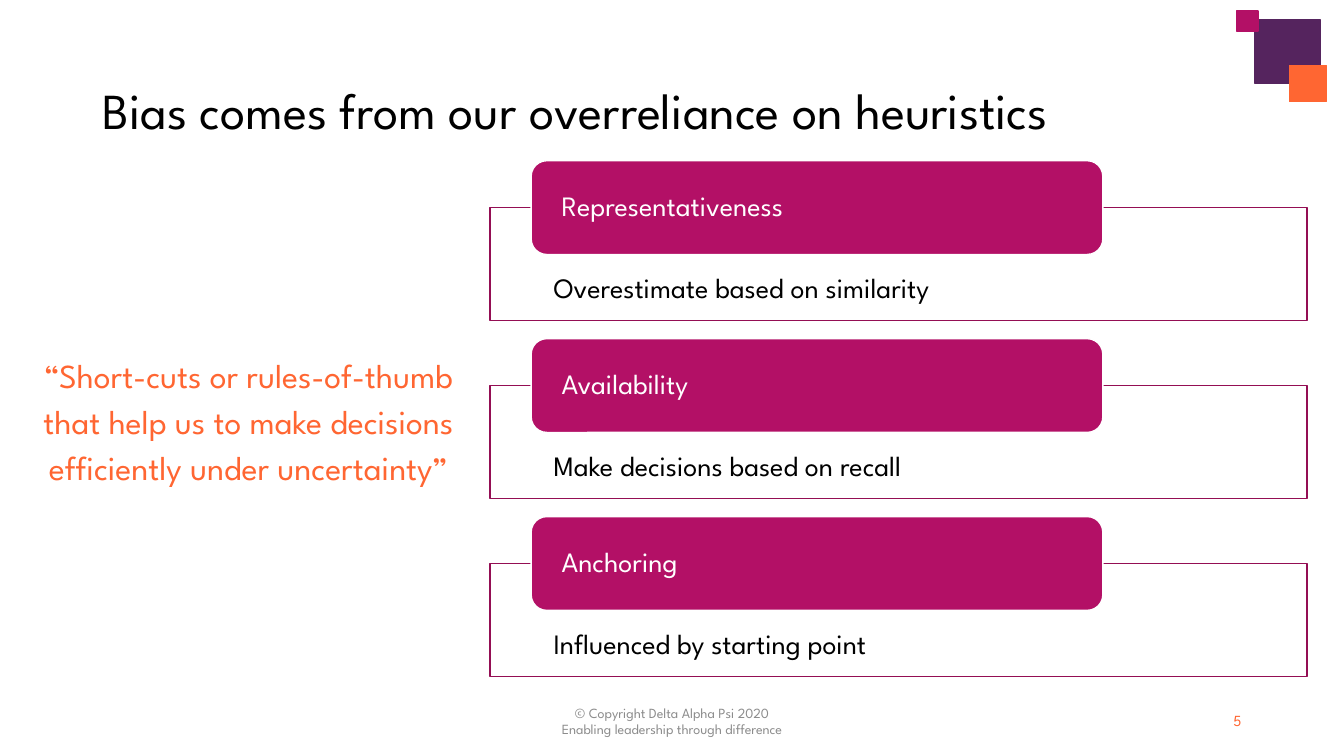
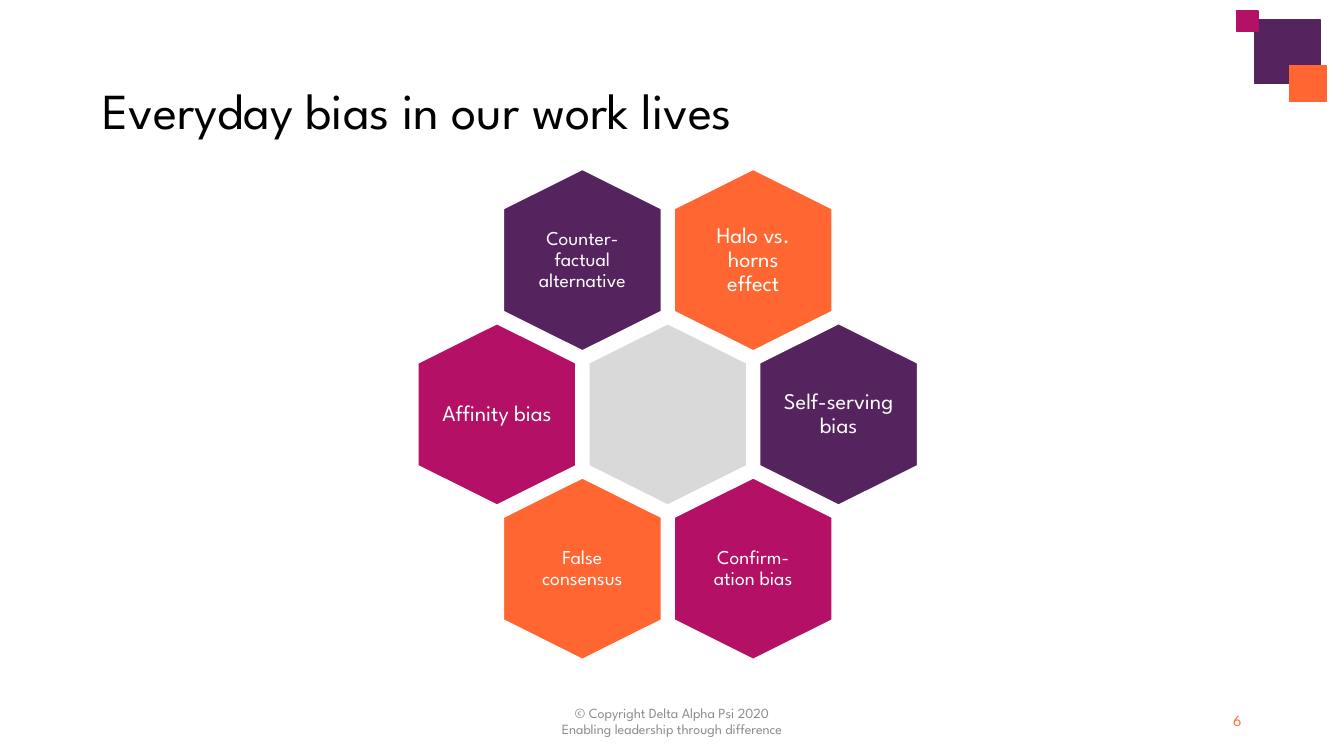
"""Build two slides on heuristics and everyday bias."""
from pptx import Presentation
from pptx.dml.color import RGBColor
from pptx.enum.shapes import MSO_SHAPE
from pptx.enum.text import MSO_ANCHOR, MSO_AUTO_SIZE, PP_ALIGN
from pptx.util import Pt

FONT = "League Spartan"
PURPLE, ORANGE, MAGENTA = "55245E", "FF6632", "B31066"
DARK_MAGENTA, GREY, LIGHT_GREY = "940E54", "8C8C8C", "D9D9D9"
BLACK, WHITE = "000000", "FFFFFF"


def paint(shape, fill, line):
    shape.shadow.inherit = False
    shape.fill.solid()
    shape.fill.fore_color.rgb = RGBColor.from_string(fill)
    shape.line.color.rgb = RGBColor.from_string(line)
    shape.line.width = Pt(1)


def write(shape, text, size, color, align=PP_ALIGN.LEFT, spacing=0.9,
          margins=(7.2, 3.6, 7.2, 3.6), anchor=MSO_ANCHOR.MIDDLE):
    frame = shape.text_frame
    frame.text = text
    frame.word_wrap = True
    frame.auto_size = MSO_AUTO_SIZE.NONE
    frame.vertical_anchor = anchor
    (frame.margin_left, frame.margin_top,
     frame.margin_right, frame.margin_bottom) = map(Pt, margins)
    for paragraph in frame.paragraphs:
        paragraph.alignment = align
        paragraph.line_spacing = spacing
        paragraph.font.name = FONT
        paragraph.font.size = Pt(size)
        paragraph.font.color.rgb = RGBColor.from_string(color)


presentation = Presentation()
presentation.slide_width, presentation.slide_height = Pt(960), Pt(540)
title_only = presentation.slide_layouts[5]

corner_squares = [
    (PURPLE, 896.4, 14.4, 46.8, 45.4),
    (ORANGE, 920.9, 46.8, 26.6, 25.9),
    (MAGENTA, 883.4, 7.9, 15.1, 14.4),
]
titles = ["Bias comes from our overreliance on heuristics",
          "Everyday bias in our work lives"]
footer_text = "© Copyright Delta Alpha Psi 2020\nEnabling leadership through difference"

for number, title_text in enumerate(titles, start=5):
    slide = presentation.slides.add_slide(title_only)
    for color, *box in corner_squares:
        square = slide.shapes.add_shape(MSO_SHAPE.RECTANGLE, *map(Pt, box))
        paint(square, color, color)
    title = slide.shapes.title
    title.left, title.top, title.width, title.height = map(Pt, (66, 28.8, 828, 104.4))
    write(title, title_text, 36, BLACK)
    footer = slide.shapes.add_textbox(Pt(318), Pt(500.5), Pt(324), Pt(28.8))
    write(footer, footer_text, 10, GREY, PP_ALIGN.CENTER, 1)
    page_number = slide.shapes.add_textbox(Pt(678), Pt(500.5), Pt(216), Pt(28.8))
    write(page_number, str(number), 11, ORANGE, PP_ALIGN.RIGHT, 1)

heuristics_slide, bias_slide = presentation.slides

heuristics = [
    ("Representativeness", "Overestimate based on similarity"),
    ("Availability", "Make decisions based on recall"),
    ("Anchoring", "Influenced by starting point"),
]
for row, (name, description) in enumerate(heuristics):
    top = 114.8 + row * 127.1
    panel = heuristics_slide.shapes.add_shape(
        MSO_SHAPE.RECTANGLE, Pt(350), Pt(top + 33.6), Pt(583.5), Pt(80.6))
    paint(panel, WHITE, DARK_MAGENTA)
    write(panel, description, 20, BLACK,
          margins=(45.4, 47.5, 45.4, 11.5), anchor=MSO_ANCHOR.TOP)
    label = heuristics_slide.shapes.add_shape(
        MSO_SHAPE.ROUNDED_RECTANGLE, Pt(379.4), Pt(top), Pt(408.4), Pt(67))
    paint(label, MAGENTA, WHITE)
    write(label, name, 20, WHITE, margins=(18.5, 0, 18.5, 0))

quote = heuristics_slide.shapes.add_textbox(Pt(18), Pt(152.6), Pt(319), Pt(293))
write(quote, "“Short-cuts or rules-of-thumb that help us to make decisions "
      "efficiently under uncertainty”", 24, ORANGE, PP_ALIGN.CENTER, 1.14)

hexagon_width, hexagon_height, shoulder = 112.8, 129.6, 28.1
half_column, row_pitch = 61, 110.2
center_x, center_top = 477, 231.2
hexagons = [
    (1, -1, ORANGE, "Halo vs. horns effect", 16, 22.3),
    (-1, -1, PURPLE, "Counter-factual alternative", 14, 17.3),
    (0, 0, LIGHT_GREY, "", 16, 17.3),
    (2, 0, PURPLE, "Self-serving bias", 16, 17.3),
    (1, 1, MAGENTA, "Confirm-ation bias", 14, 22.3),
    (-1, 1, ORANGE, "False consensus", 14, 17.3),
    (-2, 0, MAGENTA, "Affinity bias", 16, 17.3),
]
for column, row, color, text, size, inset in hexagons:
    middle = center_x + column * half_column
    left, right = middle - hexagon_width / 2, middle + hexagon_width / 2
    top = center_top + row * row_pitch
    bottom = top + hexagon_height
    corners = [(right, top + shoulder), (right, bottom - shoulder), (middle, bottom),
               (left, bottom - shoulder), (left, top + shoulder)]
    builder = bias_slide.shapes.build_freeform(Pt(middle), Pt(top))
    builder.add_line_segments([(Pt(x), Pt(y)) for x, y in corners], close=True)
    hexagon = builder.convert_to_shape()
    paint(hexagon, color, WHITE)
    if text:
        write(hexagon, text, size, WHITE, PP_ALIGN.CENTER,
              margins=(inset, inset + 2.9, inset, inset + 2.9))

presentation.save("out.pptx")
